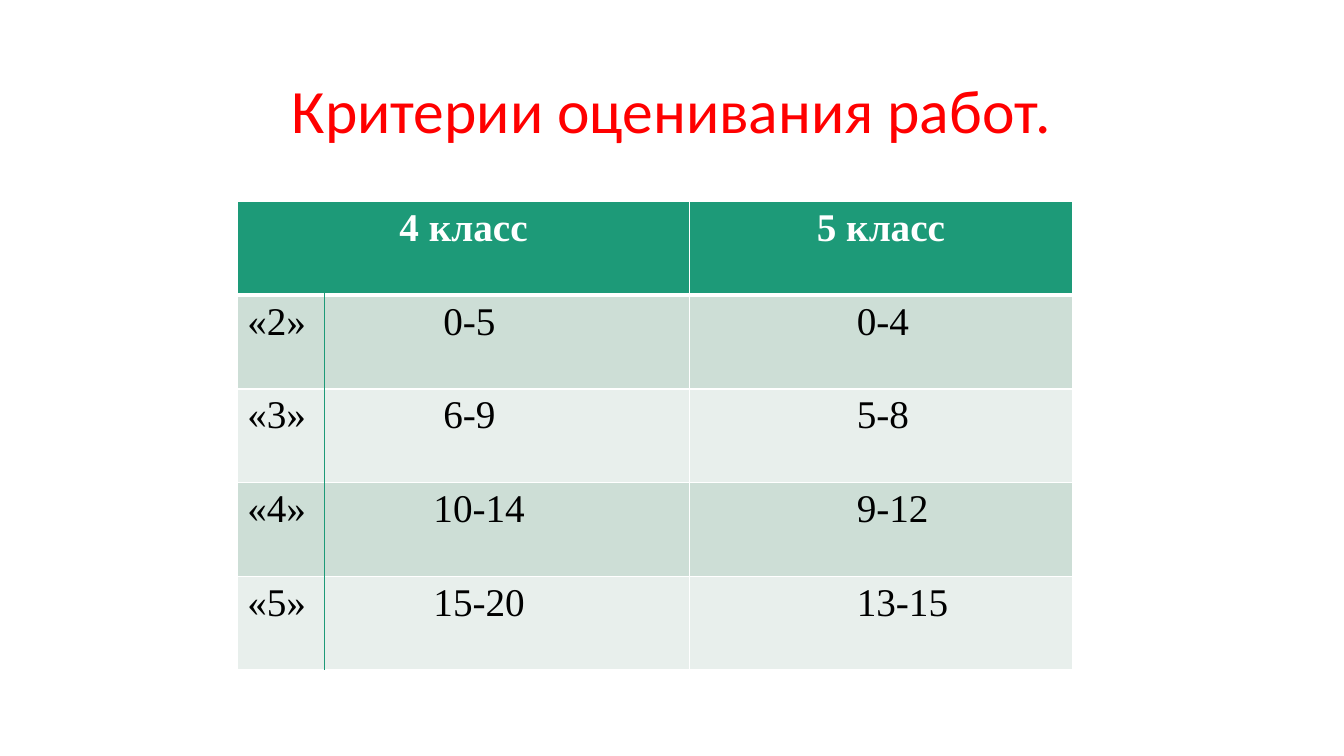
from lxml import etree
from pptx import Presentation
from pptx.dml.color import RGBColor
from pptx.enum.shapes import MSO_CONNECTOR
from pptx.enum.text import MSO_ANCHOR, PP_ALIGN
from pptx.oxml.ns import qn
from pptx.util import Cm, Pt

CENTER, LEFT = PP_ALIGN.CENTER, PP_ALIGN.LEFT
MIDDLE = MSO_ANCHOR.MIDDLE
STRAIGHT = MSO_CONNECTOR.STRAIGHT

COLORS = {
    "title": "FF0000",
    "green": "1D9A78",
    "band_dark": "CDDED6",
    "band_light": "E8EFEC",
    "white": "FFFFFF",
    "black": "000000",
}
HEADERS = ["4 класс", "5 класс"]
GRADES = [
    ("«2»", "0-5", "0-4", 4.94),
    ("«3»", "6-9", "5-8", 4.94),
    ("«4»", "10-14", "9-12", 4.69),
    ("«5»", "15-20", "13-15", 4.69),
]
COL_SHARES = [0.542, 0.458]


def rgb(name):
    """Return the named colour."""
    return RGBColor.from_string(COLORS[name])


def write(tf, text, font="Times New Roman", size=28, color="black", bold=False,
          align=LEFT, spacing=None, tab=None):
    """Write one formatted paragraph, with an optional tab stop in cm."""
    p = tf.paragraphs[0]
    p.alignment = align
    if spacing:
        p.line_spacing = spacing
    if tab:
        tabs = etree.SubElement(p._p.get_or_add_pPr(), qn("a:tabLst"))
        etree.SubElement(tabs, qn("a:tab"), pos=str(Cm(tab)), algn="l")
    r = p.add_run()
    r.text = text
    r.font.name = font
    r.font.size = Pt(size)
    r.font.bold = bold
    r.font.color.rgb = rgb(color)


def style_cell(cell, fill, top=1, bottom=1):
    """Give a cell white borders and a solid fill."""
    tcPr = cell._tc.get_or_add_tcPr()
    for side, width in (("L", 1), ("R", 1), ("T", top), ("B", bottom)):
        ln = etree.SubElement(tcPr, qn(f"a:ln{side}"), w=str(Pt(width)))
        color = etree.SubElement(ln, qn("a:solidFill"))
        etree.SubElement(color, qn("a:srgbClr"), val=COLORS["white"])
    cell.fill.solid()
    cell.fill.fore_color.rgb = rgb(fill)


def add_title(s, x, y, w, h):
    """Place the slide title in the box."""
    tf = s.shapes.add_textbox(Cm(x), Cm(y), Cm(w), Cm(h)).text_frame
    tf.word_wrap = True
    tf.vertical_anchor = MIDDLE
    write(tf, "Критерии оценивания работ.", font="Calibri", size=44,
          color="title", align=CENTER, spacing=0.9)


def add_criteria(s, x, y, w, h):
    """Place the table of marks and the rule beside the marks in the box."""
    row_count = len(GRADES) + 1
    row_h = h / row_count
    table = s.shapes.add_table(row_count, len(HEADERS), Cm(x), Cm(y), Cm(w), Cm(h)).table
    for column, share in zip(table.columns, COL_SHARES):
        column.width = Cm(w * share)
    for row in table.rows:
        row.height = Cm(row_h)
    for i, header in enumerate(HEADERS):
        cell = table.cell(0, i)
        style_cell(cell, "green", bottom=3)
        write(cell.text_frame, header, color="white", bold=True, align=CENTER)
    for i, (mark, fourth, fifth, tab) in enumerate(GRADES, 1):
        left, right = table.cell(i, 0), table.cell(i, 1)
        for cell in (left, right):
            style_cell(cell, "band_dark" if i % 2 else "band_light", top=3 if i == 1 else 1)
        write(left.text_frame, f"{mark}\t{fourth}", tab=tab)
        right.margin_left = Cm(4.21)
        write(right.text_frame, fifth)
    rule_x = Cm(x + 2.2)
    rule = s.shapes.add_connector(STRAIGHT, rule_x, Cm(y + row_h - 0.1), rule_x, Cm(y + h))
    rule.line.color.rgb = rgb("green")
    rule.line.width = Pt(0.5)
    etree.SubElement(rule._element.spPr, qn("a:effectLst"))


def main():
    """Build and save the slide."""
    prs = Presentation()
    prs.slide_width, prs.slide_height = Cm(33.87), Cm(19.05)
    s = prs.slides.add_slide(prs.slide_layouts[6])
    add_title(s, 2.33, 1.01, 29.21, 3.68)
    add_criteria(s, 5.98, 5.08, 21.04, 11.8)
    prs.save("out.pptx")


if __name__ == "__main__":
    main()
